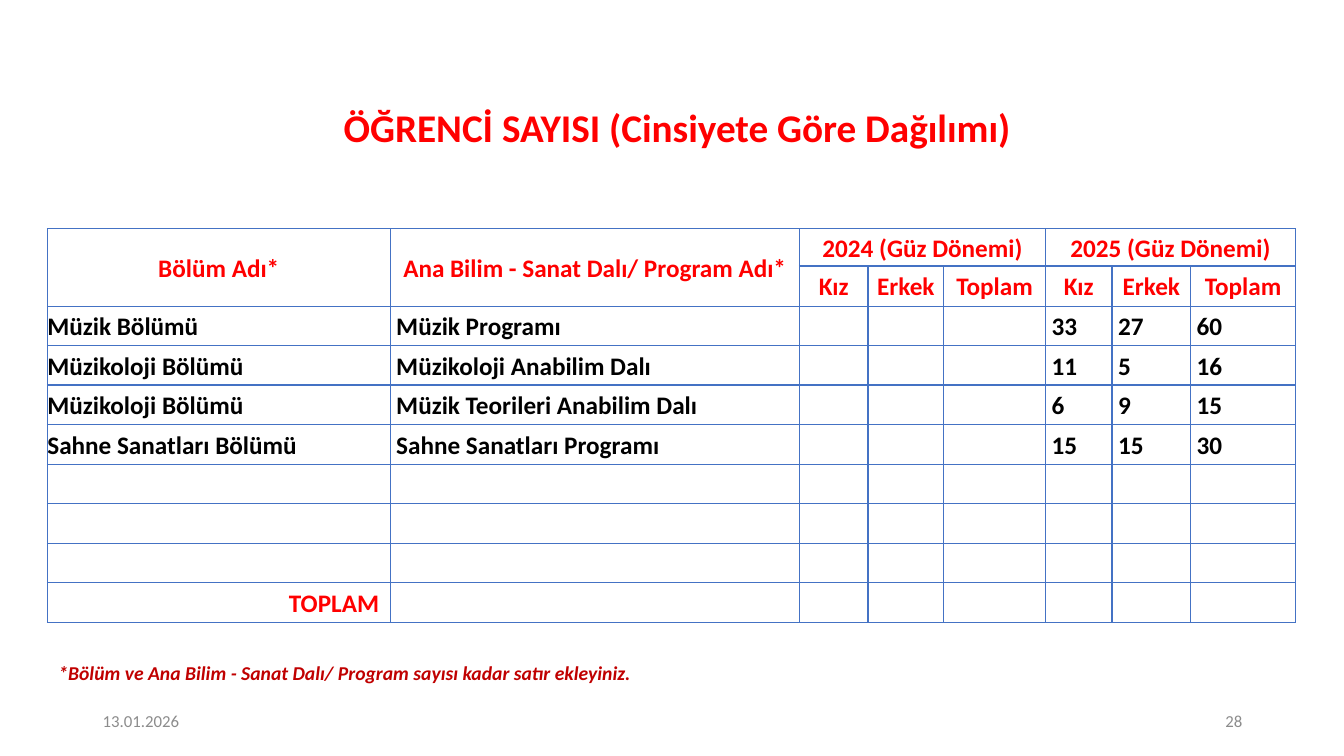
from lxml import etree
from pptx import Presentation
from pptx.dml.color import RGBColor
from pptx.enum.text import MSO_ANCHOR, PP_ALIGN
from pptx.oxml.ns import qn
from pptx.util import Pt

PX = 9144  # 100 px to the inch
LEFT, MID, RIGHT = PP_ALIGN.LEFT, PP_ALIGN.CENTER, PP_ALIGN.RIGHT
MIDDLE = MSO_ANCHOR.MIDDLE
HUES = {"red": "FF0000", "dark": "C00000", "gray": "8C8C8C",
        "black": "000000", "line": "4472C4"}


def write(frame, text, size, hue, align=LEFT, bold=True, italic=False, space=1.0):
    para = frame.paragraphs[0]
    para.alignment = align
    para.line_spacing = space
    run = para.add_run()
    run.text = text
    font = run.font
    font.name, font.size = "Calibri", Pt(size)
    font.bold, font.italic = bold, italic
    font.color.rgb = RGBColor.from_string(HUES[hue])


def border(cell):
    props = cell._tc.get_or_add_tcPr()
    for spot, side in enumerate(("lnL", "lnR", "lnT", "lnB")):
        line = etree.Element(qn("a:" + side), w=str(Pt(1)))
        fill = etree.SubElement(line, qn("a:solidFill"))
        etree.SubElement(fill, qn("a:srgbClr"), val=HUES["line"])
        props.insert(spot, line)


deck = Presentation()
deck.slide_width, deck.slide_height = 1333 * PX, 750 * PX
slide = deck.slides.add_slide(deck.slide_layouts[5])

# Title
title = slide.shapes.title
title.left, title.top, title.width, title.height = [
    n * PX for n in (73, 96, 1206, 66)]
frame = title.text_frame
frame.vertical_anchor = MIDDLE
frame.margin_right = 19 * PX
write(frame, "ÖĞRENCİ SAYISI (Cinsiyete Göre Dağılımı)", 28, "red", MID, space=0.9)

# Date, page number and note
notes = [
    ((92, 695, 300, 40), "13.01.2026", 12, "gray", LEFT, False),
    ((942, 695, 300, 40), "28", 12, "gray", RIGHT, False),
    ((48, 650, 848, 34),
     "*Bölüm ve Ana Bilim - Sanat Dalı/ Program sayısı kadar satır ekleyiniz.",
     14, "dark", LEFT, True),
]
for box, text, size, hue, align, strong in notes:
    frame = slide.shapes.add_textbox(*[n * PX for n in box]).text_frame
    frame.word_wrap = True
    frame.vertical_anchor = MIDDLE
    write(frame, text, size, hue, align, strong, strong)

# Student table
cols = [340, 406, 68, 75, 101, 66, 78, 104]
rows = [37, 40] + [39, 39, 39, 40] * 2
sexes = ["Kız", "Erkek", "Toplam"]
data = [
    ["Bölüm Adı*", "Ana Bilim - Sanat Dalı/ Program Adı*",
     "2024 (Güz Dönemi)", "", "", "2025 (Güz Dönemi)"],
    ["", ""] + sexes * 2,
    ["Müzik Bölümü", "Müzik Programı", "", "", "", "33", "27", "60"],
    ["Müzikoloji Bölümü", "Müzikoloji Anabilim Dalı", "", "", "", "11", "5", "16"],
    ["Müzikoloji Bölümü", "Müzik Teorileri Anabilim Dalı", "", "", "", "6", "9", "15"],
    ["Sahne Sanatları Bölümü", "Sahne Sanatları Programı",
     "", "", "", "15", "15", "30"],
    [], [], [],
    ["TOPLAM"],
]
table = slide.shapes.add_table(
    len(rows), len(cols), 47 * PX, 227 * PX, sum(cols) * PX, sum(rows) * PX).table
table.first_row = table.horz_banding = False
for col, width in zip(table.columns, cols):
    col.width = width * PX
for row, height in zip(table.rows, rows):
    row.height = height * PX

last = len(rows) - 1
for r, words in enumerate(data):
    head = r < 2
    for c in range(len(cols)):
        cell = table.cell(r, c)
        cell.fill.background()
        border(cell)
        cell.vertical_anchor = MIDDLE
        cell.margin_top = cell.margin_bottom = 0
        cell.margin_left = 0 if head or c == 0 else 6 * PX
        cell.margin_right = 11 * PX if r == last else 0
        if c < len(words) and words[c]:
            align = MID if head else RIGHT if r == last else LEFT
            hue = "red" if head or r == last else "black"
            write(cell.text_frame, words[c], 18, hue, align, space=1.07)

for c in (0, 1):
    table.cell(0, c).merge(table.cell(1, c))
for c in (2, 5):
    table.cell(0, c).merge(table.cell(0, c + 2))

deck.save("out.pptx")
